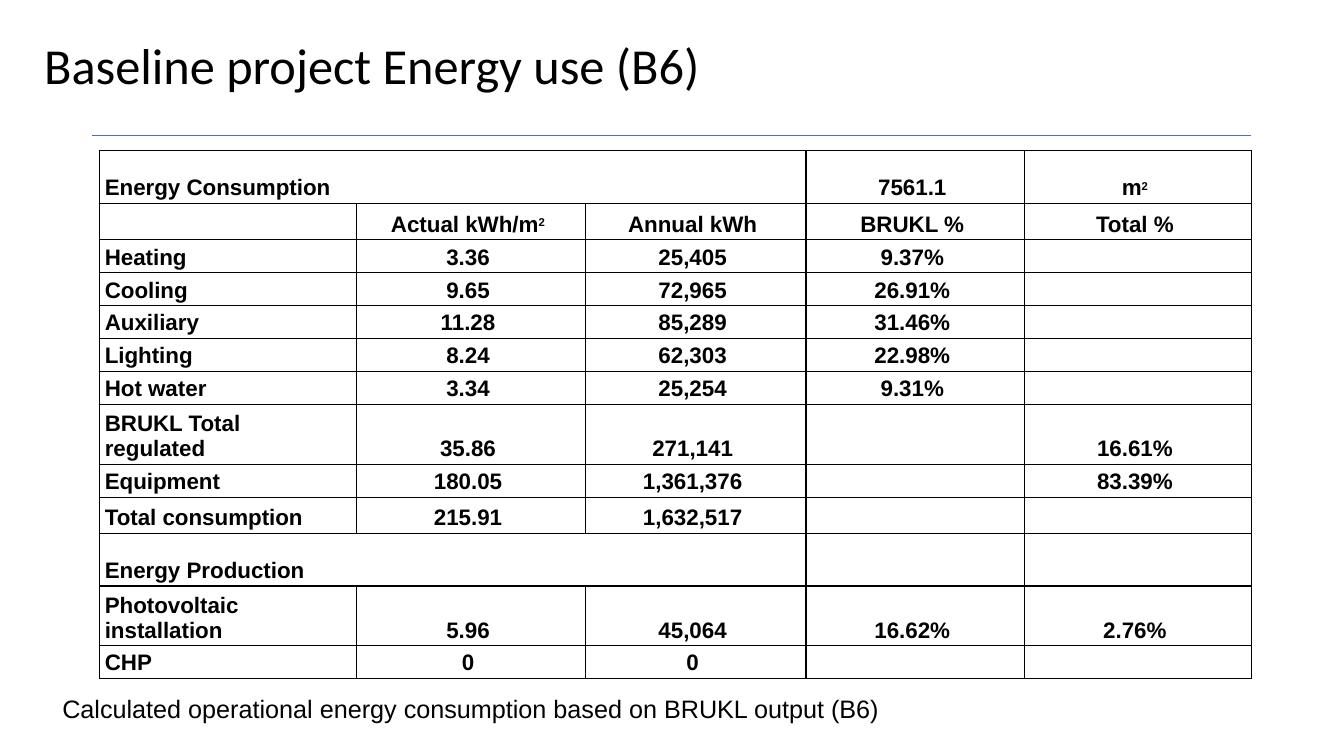
from lxml.etree import SubElement
from pptx import Presentation
from pptx.dml.color import RGBColor
from pptx.enum.shapes import MSO_CONNECTOR as Conn
from pptx.enum.text import MSO_ANCHOR as Anchor, MSO_AUTO_SIZE as Auto, PP_ALIGN as Align
from pptx.oxml.ns import qn
from pptx.util import Pt

PX = 9144  # 100 px to the inch

ROWS = [
    (53, ["Energy Consumption", "", "", "7561.1", "m^2"]),
    (36, ["", "Actual kWh/m^2", "Annual kWh", "BRUKL %", "Total %"]),
    (32, ["Heating", "3.36", "25,405", "9.37%", ""]),
    (32, ["Cooling", "9.65", "72,965", "26.91%", ""]),
    (32, ["Auxiliary", "11.28", "85,289", "31.46%", ""]),
    (32, ["Lighting", "8.24", "62,303", "22.98%", ""]),
    (32, ["Hot water", "3.34", "25,254", "9.31%", ""]),
    (59, ["BRUKL Total regulated", "35.86", "271,141", "", "16.61%"]),
    (32, ["Equipment", "180.05", "1,361,376", "", "83.39%"]),
    (36, ["Total consumption", "215.91", "1,632,517", "", ""]),
    (52, ["Energy Production", "", "", "", ""]),
    (59, ["Photovoltaic installation", "5.96", "45,064", "16.62%", "2.76%"]),
    (32, ["CHP", "0", "0", "", ""]),
]
COLS = [255, 227, 219, 217, 225]
HEADS = (0, 10)


def px(*vals):
    return [val * PX for val in vals]


def tint(code):
    return RGBColor.from_string(code)


def write(frame, text, size=16, font="Arial", color="000000", bold=False,
          align=Align.LEFT, space=None):
    """Fill the frame with one paragraph; a part after ^ is superscript."""
    para = frame.paragraphs[0]
    para.alignment, para.line_spacing = align, space
    for nth, part in enumerate(text.split("^") if text else []):
        run = para.add_run()
        run.text = part
        face = run.font
        face.name, face.bold = font, bold
        face.size = Pt(14 if nth else size)
        face.color.rgb = tint(color)
        if nth:
            run._r.get_or_add_rPr().set("baseline", "30000")
    # The end mark keeps empty cells from growing to the default size
    para._p.get_or_add_endParaRPr().set("sz", str(size * 100))


class Deck:
    def __init__(self, wide, high):
        self.pres = Presentation()
        self.pres.slide_width, self.pres.slide_height = px(wide, high)
        self.slide = self.pres.slides.add_slide(self.pres.slide_layouts[6])
        self.ink, self.rule = "000000", "4472C4"

    def text(self, box, text, anchor=Anchor.TOP, grow=False, **form):
        frame = self.slide.shapes.add_textbox(*px(*box)).text_frame
        frame.word_wrap, frame.vertical_anchor = True, anchor
        if grow:
            frame.auto_size = Auto.SHAPE_TO_FIT_TEXT
        write(frame, text, color=self.ink, **form)

    def line(self, *ends):
        line = self.slide.shapes.add_connector(Conn.STRAIGHT, *px(*ends))
        line.line.color.rgb, line.line.width = tint(self.rule), Pt(0.5)
        SubElement(line._element.spPr, qn("a:effectLst"))

    def edge(self, cell):
        """Draw a thin border on all four sides of the cell."""
        props = cell._tc.get_or_add_tcPr()
        for side in "LRTB":
            line = SubElement(props, qn(f"a:ln{side}"), w=str(Pt(1)))
            fill = SubElement(line, qn("a:solidFill"))
            SubElement(fill, qn("a:srgbClr"), val=self.ink)

    def table(self, left, top, cols, rows, heads):
        high = sum(size for size, _ in rows)
        grid = self.slide.shapes.add_table(
            len(rows), len(cols), *px(left, top, sum(cols), high)).table
        grid.first_row = grid.horz_banding = False
        for col, wide in zip(grid.columns, cols):
            col.width = wide * PX
        for row, (size, words) in zip(grid.rows, rows):
            row.height = size * PX
            for nth, (cell, word) in enumerate(zip(row.cells, words)):
                self.edge(cell)
                cell.fill.background()
                cell.vertical_anchor = Anchor.BOTTOM
                cell.margin_left, cell.margin_top, cell.margin_bottom = px(5, 3, 3)
                cell.margin_right = (11 if nth else 17) * PX
                write(cell.text_frame, word, color=self.ink, bold=True,
                      align=Align.CENTER if nth else Align.LEFT)
        for head in heads:
            grid.cell(head, 0).merge(grid.cell(head, 2))


def main():
    deck = Deck(1334, 750)
    deck.text((34, 17, 1266, 102), "Baseline project Energy use (B6)",
              anchor=Anchor.MIDDLE, size=36, font="Calibri", space=0.9)
    deck.line(1242, 134, 91, 134)
    deck.text((52, 683, 1150, 40),
              "Calculated operational energy consumption based on BRUKL output (B6)",
              grow=True, size=18)
    deck.table(99, 149, COLS, ROWS, HEADS)
    deck.pres.save("out.pptx")


if __name__ == "__main__":
    main()
